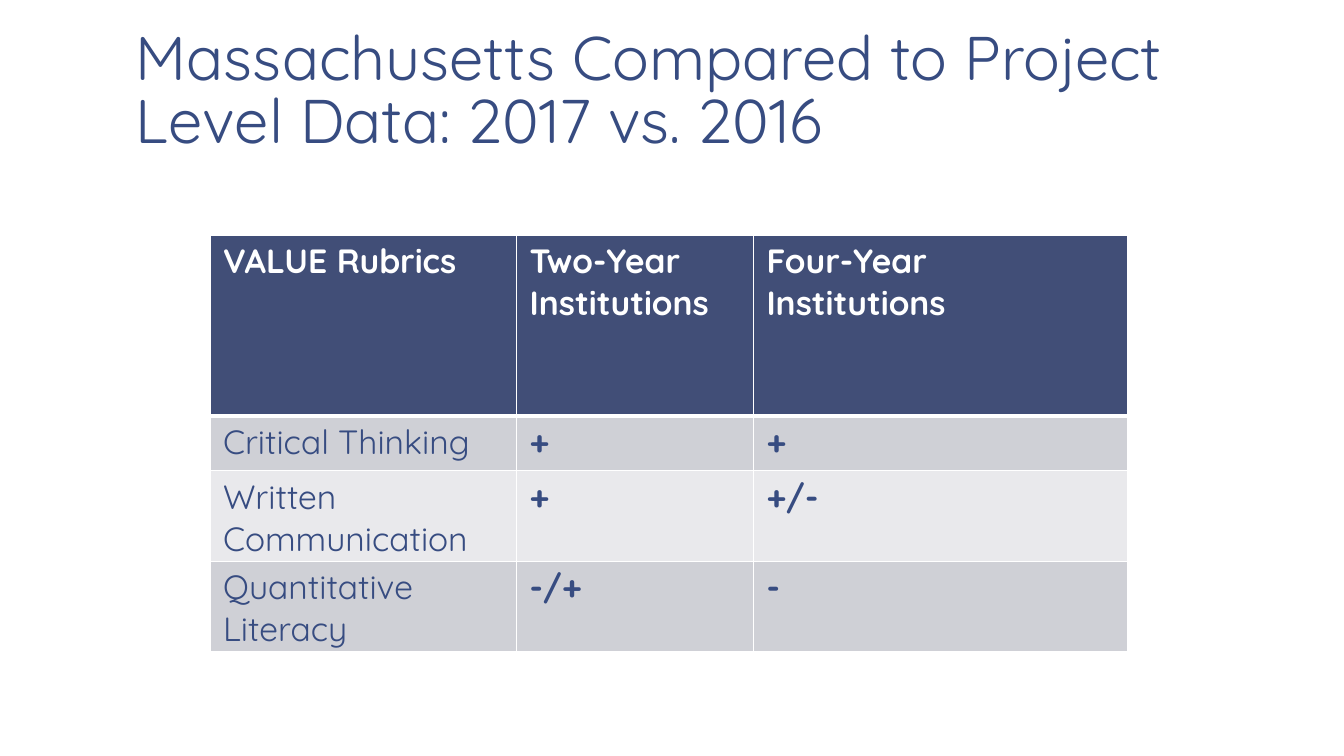
from dataclasses import dataclass

from lxml.etree import SubElement
from pptx import Presentation
from pptx.dml.color import RGBColor as Rgb
from pptx.enum.text import MSO_ANCHOR as Anchor
from pptx.oxml.ns import qn
from pptx.util import Inches, Pt


@dataclass(frozen=True)
class Theme:
    font: str = "Quicksand"
    title_size: int = 44
    table_size: int = 24
    ink: str = "374C81"
    paper: str = "FFFFFF"
    header: str = "414E77"
    bands: tuple = ("CFD0D6", "E9E9EC")
    thin: int = 1
    thick: int = 3


class RubricSlide:
    """A slide on a grid of 160 columns by 90 rows, drawn in one theme."""

    def __init__(self, deck, theme):
        self.theme = theme
        self.column = deck.slide_width / 160
        self.row = deck.slide_height / 90
        self.slide = deck.slides.add_slide(deck.slide_layouts[6])
        background = self.slide.background.fill
        background.solid()
        background.fore_color.rgb = Rgb.from_string(theme.paper)

    def across(self, columns):
        return round(columns * self.column)

    def down(self, rows):
        return round(rows * self.row)

    def box(self, left, top, width, height):
        return self.across(left), self.down(top), self.across(width), self.down(height)

    def label(self, frame, words, size, color, bold=False):
        frame.text = words
        font = frame.paragraphs[0].runs[0].font
        font.name, font.size, font.bold = self.theme.font, Pt(size), bold
        font.color.rgb = Rgb.from_string(color)

    def title(self, words, *place):
        frame = self.slide.shapes.add_textbox(*self.box(*place)).text_frame
        frame.word_wrap = True
        frame.vertical_anchor = Anchor.BOTTOM
        frame.margin_left = frame.margin_right = Inches(0.13)
        frame.margin_top = frame.margin_bottom = Inches(0.07)
        self.label(frame, words, self.theme.title_size, self.theme.ink)
        frame.paragraphs[0].line_spacing = 0.85

    def border(self, cell, widths):
        properties = cell._tc.get_or_add_tcPr()
        for position, (side, width) in enumerate(widths.items()):
            line = SubElement(properties, qn(f"a:ln{side}"), w=str(Pt(width)))
            fill = SubElement(line, qn("a:solidFill"))
            SubElement(fill, qn("a:srgbClr"), val=self.theme.paper)
            properties.insert(position, line)

    def cell(self, cell, words, row, column):
        theme = self.theme
        heading = row == 0
        cell.margin_left = cell.margin_right = Inches(0.13)
        cell.margin_top = cell.margin_bottom = Inches(0.05)
        color = theme.paper if heading else theme.ink
        self.label(cell.text_frame, words, theme.table_size, color, heading or column > 0)
        cell.fill.solid()
        shade = theme.header if heading else theme.bands[(row - 1) % 2]
        cell.fill.fore_color.rgb = Rgb.from_string(shade)
        self.border(cell, {
            "L": theme.thin,
            "R": theme.thin,
            "T": theme.thick if row == 1 else theme.thin,
            "B": theme.thick if heading else theme.thin,
        })

    def table(self, records, left, top, widths, heights):
        place = self.box(left, top, sum(widths), sum(heights))
        table = self.slide.shapes.add_table(len(heights), len(widths), *place).table
        for column, width in zip(table.columns, widths):
            column.width = self.across(width)
        for row, height in zip(table.rows, heights):
            row.height = self.down(height)
        for row, record in enumerate(records):
            for column, words in enumerate(record):
                self.cell(table.cell(row, column), words, row, column)


RUBRICS = [
    ("VALUE Rubrics", "Two-Year Institutions", "Four-Year Institutions"),
    ("Critical Thinking", "+", "+"),
    ("Written Communication", "+", "+/-"),
    ("Quantitative Literacy", "-/+", "-"),
]


def main():
    deck = Presentation()
    deck.slide_width, deck.slide_height = Inches(13.33), Inches(7.5)
    comparison = RubricSlide(deck, Theme())
    comparison.title(
        "Massachusetts Compared to Project Level Data: 2017 vs. 2016",
        14.6, 1, 133.4, 18.4,
    )
    comparison.table(RUBRICS, 25, 28, (36.5, 28.2, 44.5), (21.5, 6.5, 9, 9))
    deck.save("out.pptx")


if __name__ == "__main__":
    main()
